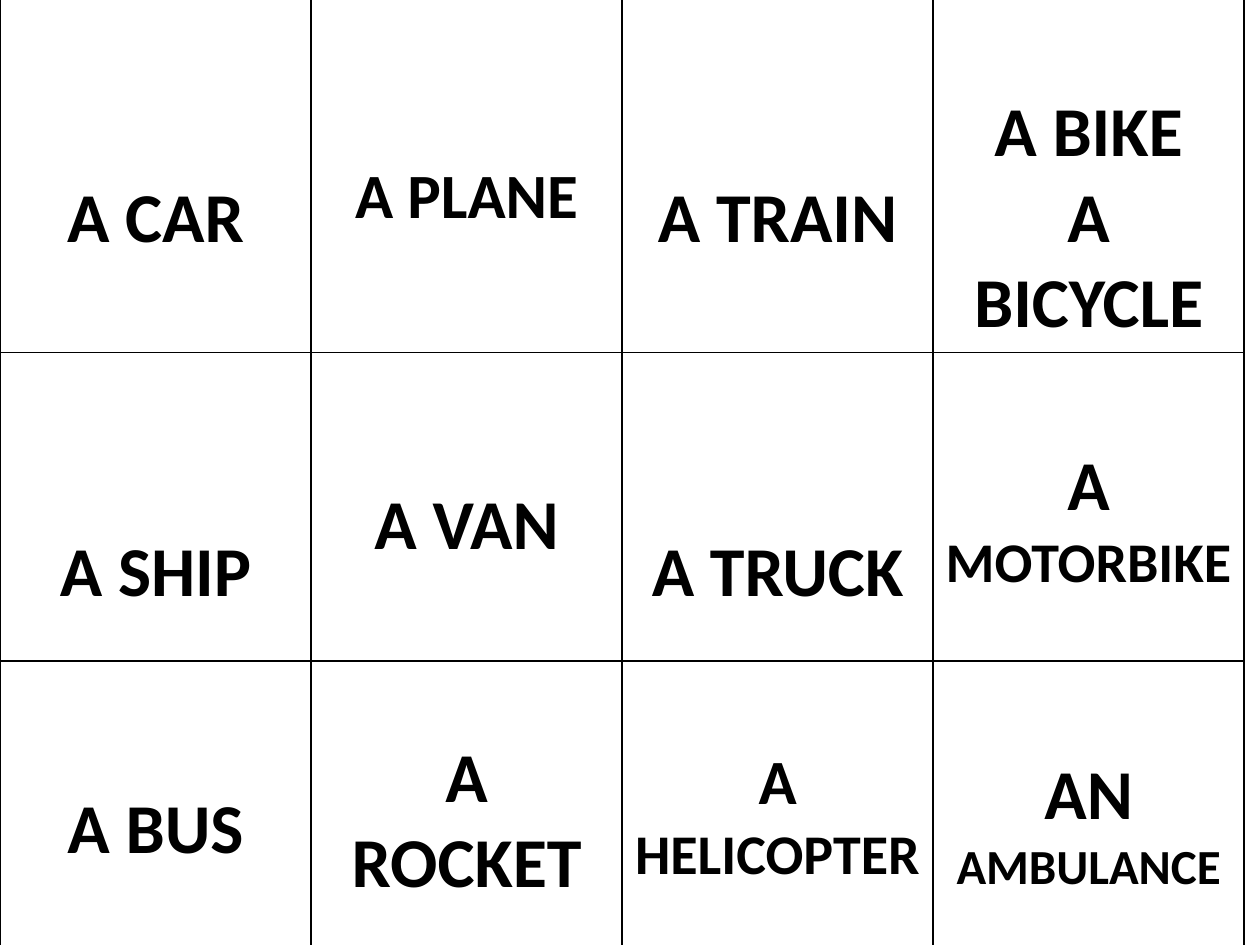
from dataclasses import dataclass

from lxml.etree import SubElement
from pptx import Presentation
from pptx.dml.color import RGBColor
from pptx.enum.text import PP_ALIGN as Align
from pptx.oxml.ns import qn
from pptx.table import _Cell as Cell
from pptx.util import Cm, Pt

COLORS = {"text": "000000", "border": "000000"}
FONT = "Calibri"
COLUMN_WIDTH = 6.27
ROW_HEIGHTS = (6.96, 6.22, 5.74)
BASE_MARGIN = 0.13
LINE_CM_PER_POINT = 1.22 * 2.54 / 72  # Calibri line height


@dataclass
class Card:
    """One vehicle name; drop is the space above it, in points of type."""
    lines: tuple[str, ...]
    drop: int
    size: int = 40
    long_word: str = ""
    long_word_size: int = 32


CARDS = (
    (Card(("A CAR",), 80), Card(("A PLANE",), 72, 36),
     Card(("A TRAIN",), 80), Card(("A BIKE", "A BICYCLE"), 40)),
    (Card(("A SHIP",), 80), Card(("A VAN",), 58),
     Card(("A TRUCK",), 80), Card(("A ",), 40, long_word="MOTORBIKE")),
    (Card(("A BUS",), 56), Card(("A ROCKET",), 32),
     Card(("A ",), 36, 36, "HELICOPTER"),
     Card(("AN ",), 40, long_word="AMBULANCE", long_word_size=28)),
)


def add_borders(cell: Cell) -> None:
    properties = cell._tc.get_or_add_tcPr()
    for side in ("a:lnL", "a:lnR", "a:lnT", "a:lnB"):
        line = SubElement(properties, qn(side), w=str(Pt(1)))
        fill = SubElement(line, qn("a:solidFill"))
        SubElement(fill, qn("a:srgbClr"), val=COLORS["border"])


def fill_cell(cell: Cell, card: Card) -> None:
    add_borders(cell)
    cell.fill.background()
    cell.margin_top = Cm(BASE_MARGIN + card.drop * LINE_CM_PER_POINT)
    frame = cell.text_frame
    for index, text in enumerate(card.lines):
        paragraph = frame.paragraphs[0] if index == 0 else frame.add_paragraph()
        paragraph.alignment = Align.CENTER
        font = paragraph.font
        font.name, font.size, font.bold = FONT, Pt(card.size), True
        font.color.rgb = RGBColor.from_string(COLORS["text"])
        paragraph.add_run().text = text
    if card.long_word:
        run = paragraph.add_run()
        run.text = card.long_word
        run.font.size = Pt(card.long_word_size)


def main() -> None:
    presentation = Presentation()
    presentation.slide_width, presentation.slide_height = Cm(25.4), Cm(19.05)
    slide = presentation.slides.add_slide(presentation.slide_layouts[6])

    # Grid of word cards
    columns = len(CARDS[0])
    table = slide.shapes.add_table(
        len(CARDS), columns, Cm(0), Cm(-0.03),
        Cm(columns * COLUMN_WIDTH), Cm(sum(ROW_HEIGHTS))).table
    table.first_row = table.horz_banding = False
    for column in table.columns:
        column.width = Cm(COLUMN_WIDTH)
    for row, height, cards in zip(table.rows, ROW_HEIGHTS, CARDS):
        row.height = Cm(height)
        for cell, card in zip(row.cells, cards):
            fill_cell(cell, card)

    presentation.save("out.pptx")


if __name__ == "__main__":
    main()
